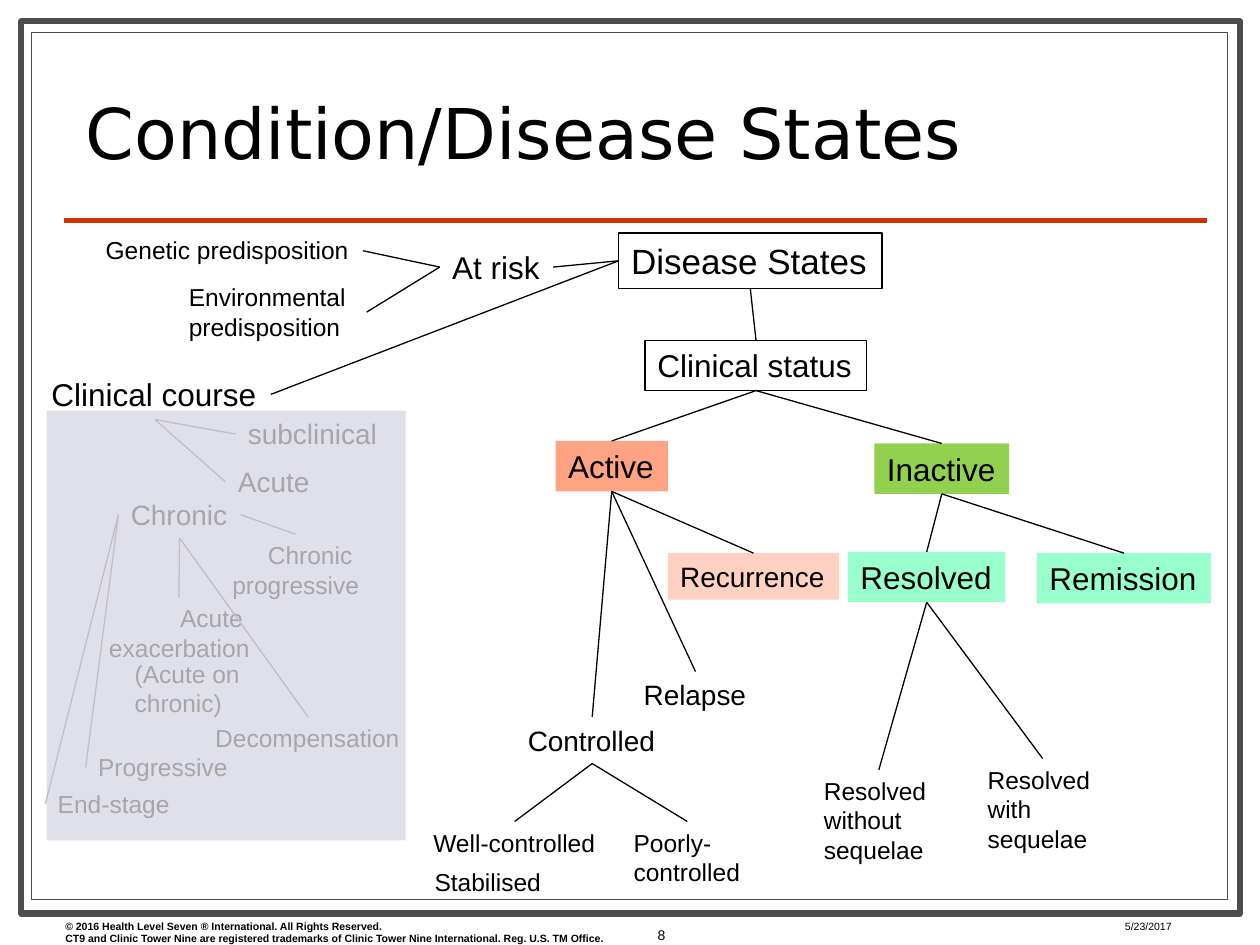
import pptx
import pptx.util
import pptx.dml.color
import pptx.enum.shapes
import pptx.enum.text
import pptx.oxml.ns
import lxml.etree

Inches = pptx.util.Inches
Pt = pptx.util.Pt
ALIGN = pptx.enum.text.PP_ALIGN
ANCHOR = pptx.enum.text.MSO_ANCHOR

THEME = {
    "font": "Arial", "title_font": "DejaVu Sans",
    "ink": "000000", "muted": "A6A6A6", "faint": "C0C0C0", "paper": "FFFFFF",
    "border": "4D4D4D", "rule": "CC3300", "panel": "E0E0EB",
    "active": "FFA385", "recurrence": "FFD1C2",
    "inactive": "92D050", "outcome": "99FFCC",
    "title": 40, "root": 20, "branch": 18, "state": 16, "detail": 14,
    "footer": 6, "number": 8, "thin": 0.75, "thick": 3, "frame": 3.5,
}

HEIGHTS = {"root": 0.44, "branch": 0.4, "state": 0.37, "detail": 0.34}
EXTRA_LINE = 0.235

FRAMES = [
    ((0.17, 0.17, 9.67, 7.08), "paper", "border", "frame"),
    ((0.25, 0.26, 9.49, 6.88), "paper", "border", "thin"),
    ((0.37, 3.26, 2.85, 3.41), "panel", None, None),
]

COPYRIGHT = [
    "© 2016 Health Level Seven ® International. All Rights Reserved.",
    "CT9 and Clinic Tower Nine are registered trademarks of Clinic Tower Nine "
    "International. Reg. U.S. TM Office.",
]

# key: lines, left, top, width, size, options
NODES = {
    "states": (["Disease States"], 4.91, 1.85, 2.09, "root", {"line": "ink"}),
    "risk": (["At risk"], 3.49, 1.92, 0.9, "branch", {}),
    "genetic": (["Genetic predisposition"], 0.74, 1.82, 2.14, "detail", {}),
    "environment": (["Environmental", "predisposition"], 1.4, 2.19, 1.51, "detail", {}),
    "status": (["Clinical status"], 5.12, 2.7, 1.76, "branch", {"line": "ink"}),
    "active": (["Active"], 4.41, 3.5, 0.89, "branch", {"fill": "active"}),
    "inactive": (["Inactive"], 6.94, 3.52, 1.07, "branch", {"fill": "inactive"}),
    "recurrence": (["Recurrence"], 5.3, 4.39, 1.36, "state", {"fill": "recurrence"}),
    "resolved": (["Resolved"], 6.73, 4.38, 1.25, "branch", {"fill": "outcome"}),
    "remission": (["Remission"], 8.23, 4.39, 1.38, "branch", {"fill": "outcome"}),
    "relapse": (["Relapse"], 5.01, 5.33, 1.02, "state", {}),
    "controlled": (["Controlled"], 4.09, 5.69, 1.22, "state", {}),
    "well": (["Well-controlled"], 3.34, 6.52, 1.49, "detail", {}),
    "stabilised": (["Stabilised"], 3.35, 6.83, 1.05, "detail", {}),
    "poorly": (["Poorly-", "controlled"], 4.93, 6.52, 1.05, "detail", {}),
    "without": (["Resolved", "without", "sequelae"], 6.44, 6.11, 1.07, "detail", {}),
    "with": (["Resolved", "with", "sequelae"], 7.74, 6.02, 1.07, "detail", {}),
    "course": (["Clinical course"], 0.31, 2.93, 1.84, "branch", {}),
    "subclinical": (["subclinical"], 1.87, 3.26, 1.23, "state", {"color": "muted"}),
    "acute": (["Acute"], 1.79, 3.64, 0.78, "state", {"color": "muted"}),
    "chronic": (["Chronic"], 0.94, 3.9, 0.97, "state", {"color": "muted"}),
    "chronic progressive": (["Chronic ", "progressive"], 1.74, 4.24, 1.21, "detail",
                            {"color": "muted", "align": ALIGN.RIGHT}),
    "exacerbation": (["Acute ", "exacerbation"], 0.76, 4.74, 1.32, "detail",
                     {"color": "muted", "align": ALIGN.RIGHT}),
    "acute on chronic": (["(Acute on", "chronic)"], 0.97, 5.18, 1.09, "detail",
                         {"color": "muted"}),
    "decompensation": (["Decompensation"], 1.61, 5.69, 1.67, "detail", {"color": "muted"}),
    "progressive": (["Progressive"], 0.68, 5.92, 1.24, "detail", {"color": "muted"}),
    "end-stage": (["End-stage"], 0.36, 6.21, 1.09, "detail", {"color": "muted"}),
}

TOP, LEFT, BOTTOM, RIGHT = range(4)

# parent, side, child side, children, colour
BRANCHES = [
    ("states", LEFT, RIGHT, ["risk", "course"], "ink"),
    ("risk", LEFT, RIGHT, ["genetic", "environment"], "ink"),
    ("states", BOTTOM, TOP, ["status"], "ink"),
    ("status", BOTTOM, TOP, ["active", "inactive"], "ink"),
    ("active", BOTTOM, TOP, ["recurrence", "relapse", "controlled"], "ink"),
    ("inactive", BOTTOM, TOP, ["resolved", "remission"], "ink"),
    ("resolved", BOTTOM, TOP, ["without", "with"], "ink"),
    ("controlled", BOTTOM, TOP, ["well", "poorly"], "ink"),
    ("course", BOTTOM, LEFT, ["subclinical", "acute"], "faint"),
    ("chronic", RIGHT, TOP, ["chronic progressive"], "faint"),
    ("chronic", BOTTOM, TOP, ["exacerbation", "decompensation"], "faint"),
    ("chronic", LEFT, LEFT, ["progressive", "end-stage"], "faint"),
]


def rgb(name):
    return pptx.dml.color.RGBColor.from_string(THEME[name])


def write(sp, lines, size, color="ink", font="font", align=ALIGN.LEFT,
          anchor=ANCHOR.TOP, bold=False, wrap=True, spacing=None):
    tf = sp.text_frame
    tf.word_wrap = wrap
    tf.vertical_anchor = anchor
    tf.text = "\n".join(lines)
    for p in tf.paragraphs:
        p.alignment = align
        if spacing:
            p.line_spacing = spacing
        for r in p.runs:
            r.font.name = THEME[font]
            r.font.size = Pt(THEME[size])
            r.font.bold = bold
            r.font.color.rgb = rgb(color)


def add_label(s, box, lines, size, **style):
    sp = s.shapes.add_textbox(*map(Inches, box))
    write(sp, lines, size, **style)
    return sp


def add_box(s, box, fill=None, line=None, weight="thin"):
    sp = s.shapes.add_shape(pptx.enum.shapes.MSO_SHAPE.RECTANGLE, *map(Inches, box))
    sp.shadow.inherit = False
    if fill:
        sp.fill.solid()
        sp.fill.fore_color.rgb = rgb(fill)
    else:
        sp.fill.background()
    if line:
        sp.line.color.rgb = rgb(line)
        sp.line.width = Pt(THEME[weight])
    else:
        sp.line.fill.background()
    return sp


def add_node(s, lines, left, top, width, size, options):
    box = (left, top, width, HEIGHTS[size] + EXTRA_LINE * (len(lines) - 1))
    look = {k: v for k, v in options.items() if k in ("fill", "line")}
    style = {k: v for k, v in options.items() if k not in look}
    if not look:
        return add_label(s, box, lines, size, wrap=False, **style)
    sp = add_box(s, box, **look)
    write(sp, lines, size, wrap=False, **style)
    return sp


def add_line(s, color, weight, ends=(0, 0, 0, 0)):
    line = s.shapes.add_connector(pptx.enum.shapes.MSO_CONNECTOR.STRAIGHT,
                                  *map(Inches, ends))
    line.line.color.rgb = rgb(color)
    line.line.width = Pt(THEME[weight])
    lxml.etree.SubElement(line._element.spPr, pptx.oxml.ns.qn("a:effectLst"))
    return line


def main():
    prs = pptx.Presentation()
    prs.slide_width, prs.slide_height = Inches(10), Inches(7.5)
    s = prs.slides.add_slide(prs.slide_layouts[6])

    for box, fill, line, weight in FRAMES:
        add_box(s, box, fill, line, weight)
    add_line(s, "rule", "thick", (0.51, 1.75, 9.58, 1.75))

    add_label(s, (0.58, 0.52, 8.92, 0.9), ["Condition/Disease States"], "title",
              font="title_font", anchor=ANCHOR.BOTTOM, spacing=0.8)
    add_label(s, (0.42, 7.25, 4.83, 0.3), COPYRIGHT, "footer", bold=True)
    add_label(s, (8.83, 7.25, 0.92, 0.17), ["5/23/2017"], "footer")
    add_label(s, (4.8, 7.16, 0.58, 0.52), ["8"], "number",
              align=ALIGN.RIGHT, anchor=ANCHOR.MIDDLE)

    nodes = {key: add_node(s, *node) for key, node in NODES.items()}
    for parent, side, child_side, children, color in BRANCHES:
        for child in children:
            line = add_line(s, color, "thin")
            line.begin_connect(nodes[parent], side)
            line.end_connect(nodes[child], child_side)

    prs.save("out.pptx")


if __name__ == "__main__":
    main()
